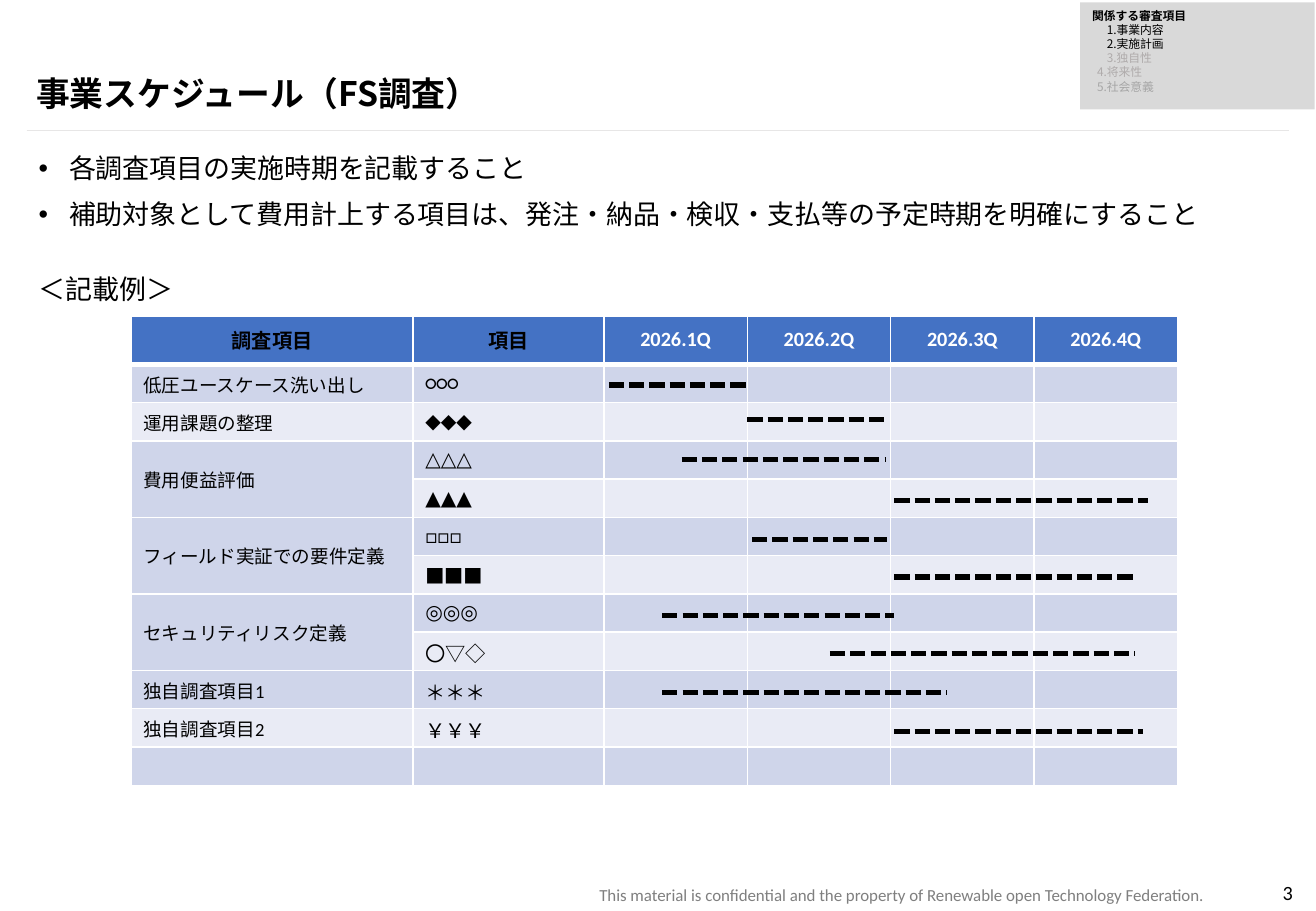
from typing import NamedTuple

from lxml import etree
from pptx import Presentation
from pptx.dml.color import RGBColor
from pptx.enum.dml import MSO_LINE
from pptx.enum.shapes import MSO_CONNECTOR, MSO_SHAPE
from pptx.enum.text import MSO_ANCHOR, PP_ALIGN
from pptx.oxml.ns import qn
from pptx.util import Pt

PX = 4572  # EMU per px, 200 px to the inch
LEFT, MID, RIGHT = PP_ALIGN.LEFT, PP_ALIGN.CENTER, PP_ALIGN.RIGHT
TOP, CENTRE, BOTTOM = MSO_ANCHOR.TOP, MSO_ANCHOR.MIDDLE, MSO_ANCHOR.BOTTOM
STRAIGHT, RECT, DASH = MSO_CONNECTOR.STRAIGHT, MSO_SHAPE.RECTANGLE, MSO_LINE.SQUARE_DOT
NOTO, LATIN = "Noto Sans CJK JP", "Calibri"
BLACK, WHITE, GREY = "000000", "FFFFFF", "AFABAB"
BLUE, BANDS = "4472C4", ("CFD5EA", "E9EBF5")


class Para(NamedTuple):
    text: str
    size: int
    color: str = BLACK
    bold: bool = False
    font: str = NOTO
    align: PP_ALIGN = LEFT
    lines: float = 1.0
    before: int = 0
    indent: int = 0
    bullet: bool = False


class Box(NamedTuple):
    left: int
    top: int
    width: int
    height: int
    paras: list[Para]
    anchor: MSO_ANCHOR = TOP


class Bar(NamedTuple):
    start: int
    end: int
    y: int


class Task(NamedTuple):
    name: str
    item: str
    span: int = 1


BOXES = [
    Box(40, 118, 2080, 78, [Para("事業スケジュール（FS調査）", 20, bold=True, lines=0.8)], BOTTOM),
    Box(44, 246, 2080, 300, [
        Para("各調査項目の実施時期を記載すること", 16, lines=0.9, indent=50, bullet=True),
        Para("補助対象として費用計上する項目は、発注・納品・検収・支払等の予定時期を明確にすること",
             16, lines=0.9, before=10, indent=50, bullet=True),
        Para("＜記載例＞", 16, lines=0.9, before=27),
    ]),
    Box(744, 1446, 1256, 54, [
        Para("This material is confidential and the property of "
             "Renewable open Technology Federation.", 10, "7F7F7F", font=LATIN, align=RIGHT)]),
    Box(1950, 1440, 178, 60, [Para("3", 12, font=LATIN, align=RIGHT)]),
]
CRITERIA = [
    Para("関係する審査項目", 7, bold=True),
    Para("1.事業内容", 7, indent=24),
    Para("2.実施計画", 7, indent=24),
    Para("3.独自性", 7, GREY, indent=24),
    Para("4.将来性", 7, GREY, indent=8),
    Para("5.社会意義", 7, "A6A6A6", indent=8),
]
HEADS = ["調査項目", "項目"] + [f"2026.{q}Q" for q in range(1, 5)]
TASKS = [
    Task("低圧ユースケース洗い出し", "○○○"),
    Task("運用課題の整理", "◆◆◆"),
    Task("費用便益評価", "△△△", 2),
    Task("", "▲▲▲"),
    Task("フィールド実証での要件定義", "□□□", 2),
    Task("", "■■■"),
    Task("セキュリティリスク定義", "◎◎◎", 2),
    Task("", "〇▽◇"),
    Task("独自調査項目1", "＊＊＊"),
    Task("独自調査項目2", "￥￥￥"),
    Task("", ""),
]
WIDTHS = [464, 314] + [236] * 4
BARS = [
    Bar(1002, 1230, 634), Bar(1230, 1458, 690), Bar(1122, 1458, 756), Bar(1472, 1890, 824),
    Bar(1238, 1460, 888), Bar(1472, 1868, 950), Bar(1090, 1472, 1014), Bar(1366, 1868, 1076),
    Bar(1090, 1558, 1140), Bar(1472, 1882, 1204),
]


def rgb(color: str) -> RGBColor:
    return RGBColor.from_string(color)


def write(frame, paras: list[Para]) -> None:
    """Fill a text frame with styled paragraphs."""
    frame.text = "\n".join(p.text for p in paras)
    for p, spec in zip(frame.paragraphs, paras):
        p.alignment, p.line_spacing, p.space_before = spec.align, spec.lines, Pt(spec.before)
        props = p._p.get_or_add_pPr()
        if spec.indent:
            props.set("marL", str(spec.indent * PX))
        if spec.bullet:
            props.set("indent", str(-spec.indent * PX))
            etree.SubElement(props, qn("a:buFont"), typeface="Arial")
            etree.SubElement(props, qn("a:buChar"), char="•")
        for run in p.runs:
            font = run.font
            font.size, font.bold, font.name = Pt(spec.size), spec.bold, spec.font
            font.color.rgb = rgb(spec.color)
            etree.SubElement(run._r.get_or_add_rPr(), qn("a:ea"), typeface=NOTO)
        if not spec.text:
            etree.SubElement(p._p, qn("a:endParaRPr"), sz=str(spec.size * 100))


def add_box(slide, box: Box) -> None:
    shape = slide.shapes.add_textbox(*(v * PX for v in box[:4]))
    frame = shape.text_frame
    frame.word_wrap, frame.vertical_anchor = True, box.anchor
    write(frame, box.paras)
    if box.width < 200:  # page number sits flush with its box
        frame.margin_left = frame.margin_right = 0


def add_line(slide, bar: Bar, color: str, width: float, dash: MSO_LINE | None = None) -> None:
    line = slide.shapes.add_connector(STRAIGHT, bar.start * PX, bar.y * PX, bar.end * PX, bar.y * PX)
    line.line.color.rgb, line.line.width = rgb(color), Pt(width)
    if dash:
        line.line.dash_style = dash
    etree.SubElement(line._element.spPr, qn("a:effectLst"))


def set_cell(cell, para: Para, fill: str, base: int = 1) -> None:
    """Write one table cell with white borders; base is the bottom width in points."""
    props = cell._tc.get_or_add_tcPr()
    for side, width in (("L", 1), ("R", 1), ("T", 1), ("B", base)):
        edge = etree.SubElement(props, qn(f"a:ln{side}"), w=str(Pt(width)))
        paint = etree.SubElement(edge, qn("a:solidFill"))
        etree.SubElement(paint, qn("a:srgbClr"), val=WHITE)
    cell.fill.solid()
    cell.fill.fore_color.rgb = rgb(fill)
    cell.vertical_anchor = CENTRE
    write(cell.text_frame, [para])


def add_plan(slide) -> None:
    high = [80] + [63] * len(TASKS)
    frame = slide.shapes.add_table(len(high), len(WIDTHS), 216 * PX, 520 * PX,
                                   sum(WIDTHS) * PX, sum(high) * PX)
    table = frame.table
    for col, width in zip(table.columns, WIDTHS):
        col.width = width * PX
    for row, height in zip(table.rows, high):
        row.height = height * PX
    for c, head in enumerate(HEADS):
        color = BLACK if c < 2 else WHITE
        set_cell(table.cell(0, c), Para(head, 12, color, True, LATIN, MID), BLUE, 3)
    for r, task in enumerate(TASKS, 1):
        texts = [task.name, task.item] + [""] * 4
        for c, text in enumerate(texts):
            size = 12 if c == 1 else 11
            set_cell(table.cell(r, c), Para(text, size, font=LATIN), BANDS[(r - 1) % 2])
        if task.span > 1:
            table.cell(r, 0).merge(table.cell(r + task.span - 1, 0))


def add_criteria(slide) -> None:
    shape = slide.shapes.add_shape(RECT, 1778 * PX, 4 * PX, 386 * PX, 176 * PX)
    shape.shadow.inherit = False
    shape.fill.solid()
    shape.fill.fore_color.rgb = rgb("D9D9D9")
    shape.line.fill.background()
    shape.text_frame.word_wrap, shape.text_frame.vertical_anchor = True, TOP
    write(shape.text_frame, CRITERIA)


def main() -> None:
    deck = Presentation()
    deck.slide_width, deck.slide_height = 2166 * PX, 1500 * PX
    slide = deck.slides.add_slide(deck.slide_layouts[6])
    # Title rule and texts
    add_line(slide, Bar(44, 2122, 214), "E7E6E6", 0.25)
    for box in BOXES:
        add_box(slide, box)
    # Schedule with its bars
    add_plan(slide)
    for bar in BARS:
        add_line(slide, bar, BLACK, 3, DASH)
    # Review criteria in the corner
    add_criteria(slide)
    deck.save("out.pptx")


if __name__ == "__main__":
    main()
